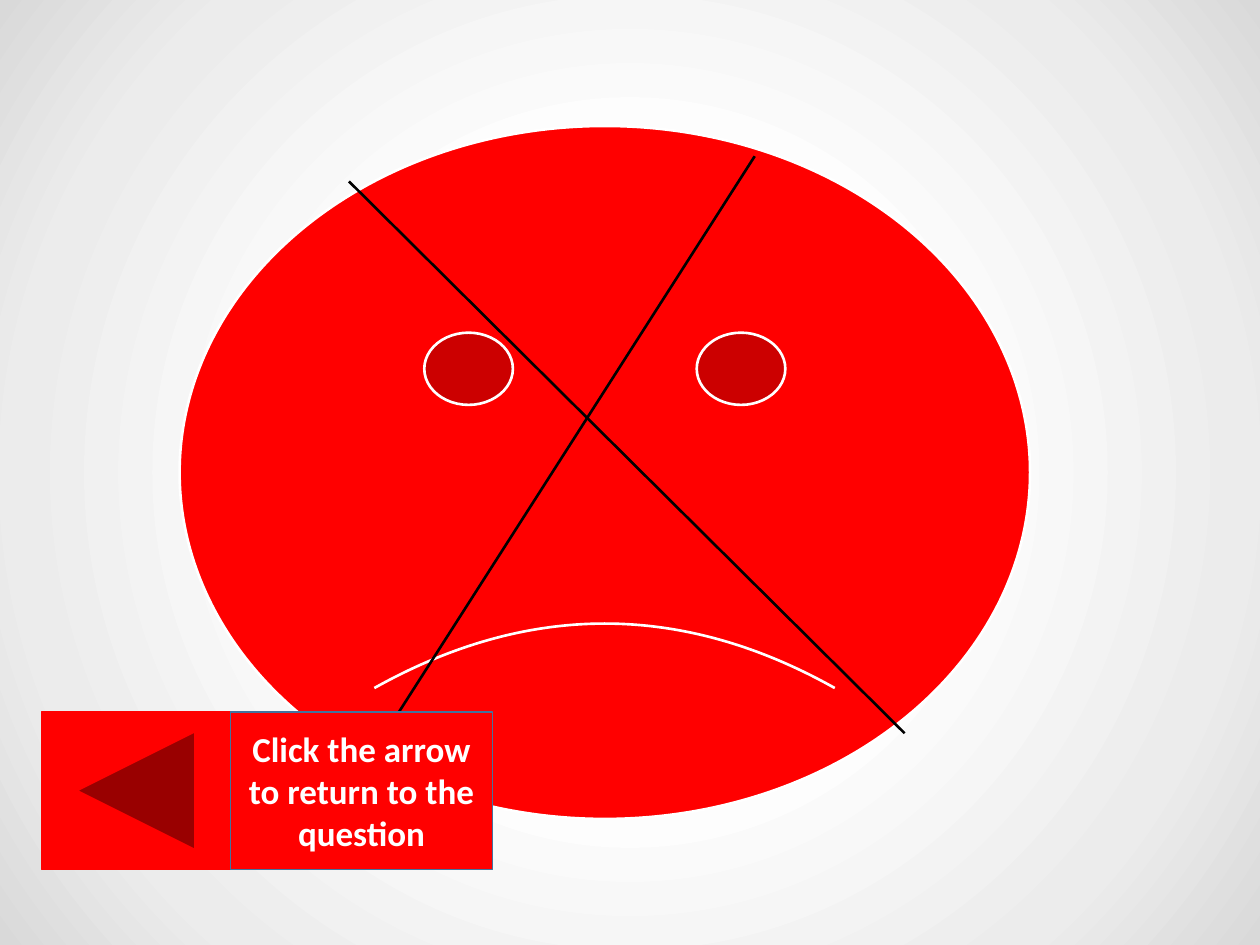
from lxml import etree
from pptx import Presentation
from pptx import util as u
from pptx.dml.color import RGBColor
from pptx.enum import shapes, text
from pptx.oxml import parse_xml
from pptx.oxml.ns import nsdecls, qn

COLS, ROWS = 40, 30
WIDTH, HEIGHT = u.Inches(10), u.Inches(7.5)
RED = RGBColor(0xFF, 0x00, 0x00)
WHITE = RGBColor(0xFF, 0xFF, 0xFF)
BLACK = RGBColor(0x00, 0x00, 0x00)
BLUE = RGBColor(0x43, 0x73, 0x9E)
BACKDROP = (
    (0, RGBColor(0xF2, 0xF2, 0xF2)),
    (39, WHITE),
    (78, RGBColor(0xEC, 0xEC, 0xEC)),
    (100, RGBColor(0xD9, 0xD9, 0xD9)),
)


def col(n):
    return round(WIDTH * n / COLS)


def row(n):
    return round(HEIGHT * n / ROWS)


def set_backdrop(s):
    stops = "".join(
        f'<a:gs pos="{pos * 1000}"><a:srgbClr val="{color}"/></a:gs>'
        for pos, color in BACKDROP
    )
    bg = parse_xml(
        f'<p:bg {nsdecls("p", "a")}><p:bgPr><a:gradFill rotWithShape="1">'
        f'<a:gsLst>{stops}</a:gsLst><a:path path="circle">'
        '<a:fillToRect l="50000" t="50000" r="50000" b="50000"/></a:path>'
        '</a:gradFill><a:effectLst/></p:bgPr></p:bg>'
    )
    s.element.cSld.insert(0, bg)


def add_red_shape(group, kind, x, y, w, h, line, weight=1, adjust=None):
    sp = group.shapes.add_shape(kind, col(x), row(y), col(w), row(h))
    sp.shadow.inherit = False
    sp.fill.solid()
    sp.fill.fore_color.rgb = RED
    sp.line.color.rgb = line
    sp.line.width = u.Pt(weight)
    if adjust is not None:
        sp.adjustments[0] = adjust
    return sp


def add_stroke(group, x1, y1, x2, y2):
    c = group.shapes.add_connector(
        shapes.MSO_CONNECTOR.STRAIGHT, col(x1), row(y1), col(x2), row(y2)
    )
    c.line.color.rgb = BLACK
    c.line.width = u.Pt(1.5)
    etree.SubElement(c._element.spPr, qn("a:effectLst"))


def add_label(sp, words):
    tf = sp.text_frame
    tf.word_wrap = True
    tf.vertical_anchor = text.MSO_ANCHOR.MIDDLE
    p = tf.paragraphs[0]
    p.alignment = text.PP_ALIGN.CENTER
    r = p.add_run()
    r.text = words
    r.font.name = "Calibri"
    r.font.size = u.Pt(20)
    r.font.bold = True
    r.font.color.rgb = WHITE


def main():
    prs = Presentation()
    prs.slide_width, prs.slide_height = WIDTH, HEIGHT
    s = prs.slides.add_slide(prs.slide_layouts[6])
    set_backdrop(s)
    group = s.shapes.add_group_shape()
    kinds = shapes.MSO_SHAPE

    add_red_shape(group, kinds.SMILEY_FACE, 5.7, 4, 27, 22, WHITE, 1.5, -0.05)
    add_stroke(group, 11.08, 25.08, 23.96, 4.96)
    add_stroke(group, 28.72, 23.28, 11.08, 5.76)

    left, top, button, label, height = 1.32, 22.6, 6, 8.32, 5
    add_red_shape(group, kinds.ACTION_BUTTON_BACK_OR_PREVIOUS,
                  left, top, button, height, RED)
    sp = add_red_shape(group, kinds.PENTAGON,
                       left + button, top, label, height, BLUE, adjust=0)
    sp._element.spPr.xfrm.set("flipH", "1")
    add_label(sp, "Click the arrow to return to the question")

    prs.save("out.pptx")


if __name__ == "__main__":
    main()
